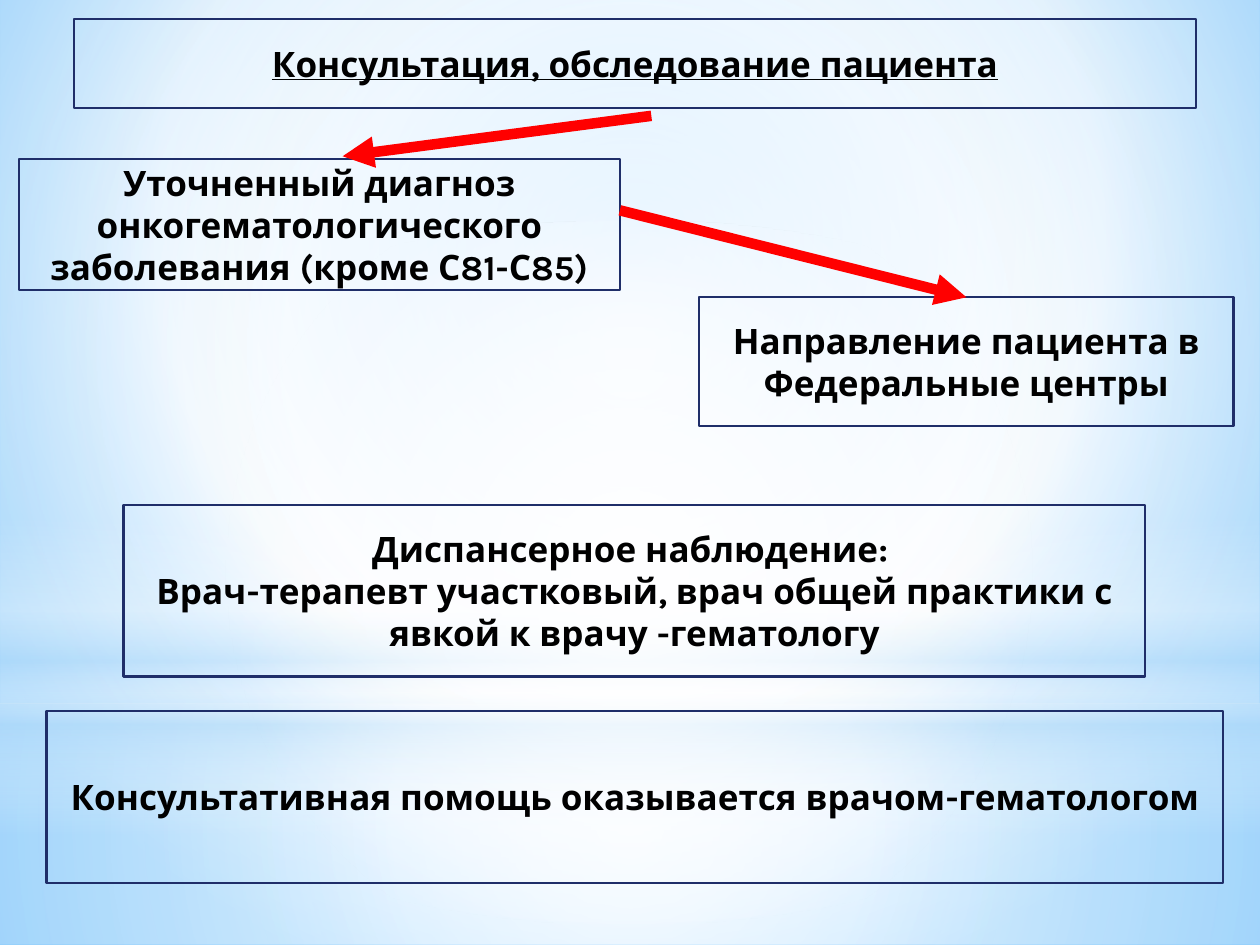
from lxml import etree
from pptx import Presentation
from pptx.dml.color import RGBColor
from pptx.enum import shapes, text
from pptx.oxml import ns
from pptx.util import Pt

FONT = "Karla"
COLORS = {
    "text": "000000",
    "border": "1F2E69",
    "arrow": "FF0000",
    "white": "FFFFFF",
    "pale": "B4DCFA",
    "sky": "9ED5FF",
    "blue": "5BB9FF",
}
CENTER = (50, 50, 50, 50)


def rgb(name):
    return RGBColor.from_string(COLORS[name])


def sub(parent, tag, **attributes):
    return etree.SubElement(parent, ns.qn(tag), attributes)


def set_gradient(fill, owner, stops, focus=None):
    fill.gradient()
    gradient = next(owner.iter(ns.qn("a:gradFill")))
    for child in list(gradient):
        gradient.remove(child)
    stop_list = sub(gradient, "a:gsLst")
    for position, color, alpha in stops:
        stop = sub(stop_list, "a:gs", pos=str(position * 1000))
        tint = sub(stop, "a:srgbClr", val=COLORS[color])
        if alpha < 100:
            sub(tint, "a:alpha", val=str(alpha * 1000))
    if focus:
        radial = sub(gradient, "a:path", path="circle")
        edges = {side: str(share * 1000) for side, share in zip("ltrb", focus)}
        sub(radial, "a:fillToRect", **edges)
    else:
        sub(gradient, "a:lin", ang="5400000", scaled="0")


def add_glow(slide, kind, top, height, stops, focus=CENTER):
    glow = slide.shapes.add_shape(kind, 0, Pt(top), Pt(720), Pt(height))
    glow.shadow.inherit = False
    glow.line.fill.background()
    set_gradient(glow.fill, glow.element, stops, focus)


def add_backdrop(slide):
    rectangle = shapes.MSO_SHAPE.RECTANGLE
    set_gradient(slide.background.fill, slide.element,
                 [(0, "sky", 100), (60, "white", 100), (100, "blue", 100)],
                 (20, 10, 20, 60))
    add_glow(slide, rectangle, 401.8, 138.2,
             [(0, "white", 91), (37, "white", 76), (100, "pale", 79)])
    add_glow(slide, rectangle, 0, 401.8,
             [(0, "white", 89), (48, "white", 62), (100, "pale", 79)])
    add_glow(slide, rectangle, 296.6, 180,
             [(0, "white", 0), (29, "white", 30), (45, "pale", 40),
              (55, "white", 26), (65, "pale", 60), (100, "white", 0)], None)
    add_glow(slide, shapes.MSO_SHAPE.OVAL, 126, 401.8,
             [(0, "white", 100), (56, "white", 0)])


def format_box(box, wording, underline=None):
    box.fill.background()
    box.line.color.rgb = rgb("border")
    box.line.width = Pt(1.25)
    frame = box.text_frame
    frame.text = wording
    frame.word_wrap = True
    frame.auto_size = text.MSO_AUTO_SIZE.NONE
    frame.vertical_anchor = text.MSO_ANCHOR.MIDDLE
    for paragraph in frame.paragraphs:
        paragraph.alignment = text.PP_ALIGN.CENTER
        font = paragraph.font
        font.name, font.size, font.bold = FONT, Pt(20), True
        font.underline = underline
        font.color.rgb = rgb("text")


def place_title(slide, wording, left, top, width, height):
    title = slide.shapes.title
    title.left, title.top = Pt(left), Pt(top)
    title.width, title.height = Pt(width), Pt(height)
    format_box(title, wording, underline=True)
    slide.shapes.element.append(title.element)


def add_box(slide, wording, left, top, width, height):
    box = slide.shapes.add_shape(shapes.MSO_SHAPE.RECTANGLE,
                                 Pt(left), Pt(top), Pt(width), Pt(height))
    box.shadow.inherit = False
    format_box(box, wording)
    return box


def add_arrow(slide, start, end):
    arrow = slide.shapes.add_connector(shapes.MSO_CONNECTOR.STRAIGHT,
                                       *map(Pt, start + end))
    arrow.line.color.rgb = rgb("arrow")
    arrow.line.width = Pt(6)
    sub(arrow.line._get_or_add_ln(), "a:tailEnd", type="triangle")
    sub(arrow.element.spPr, "a:effectLst")
    return arrow


def main():
    prs = Presentation()
    prs.slide_width, prs.slide_height = Pt(720), Pt(540)
    slide = prs.slides.add_slide(prs.slide_layouts[5])
    add_backdrop(slide)
    place_title(slide, "Консультация, обследование пациента",
                42.5, 10.8, 640.8, 51.1)
    add_box(slide, "Уточненный диагноз онкогематологического "
            "заболевания (кроме С81-С85)", 10.8, 90.7, 343.4, 74.9)
    referral = add_box(slide, "Направление пациента в Федеральные центры",
                       399.6, 169.9, 305.3, 73.4)
    to_referral = add_arrow(slide, (354.2, 120.2), (552.2, 169.9))
    to_referral.end_connect(referral, 0)
    add_arrow(slide, (372.2, 66.2), (195.8, 89.3))
    add_box(slide, "Диспансерное наблюдение: \nВрач-терапевт участковый, "
            "врач общей практики с явкой к врачу -гематологу",
            70.6, 288.7, 583.9, 97.9)
    add_box(slide, "Консультативная помощь оказывается врачом-гематологом",
            26.6, 406.1, 672.5, 98.6)
    prs.save("out.pptx")


if __name__ == "__main__":
    main()
